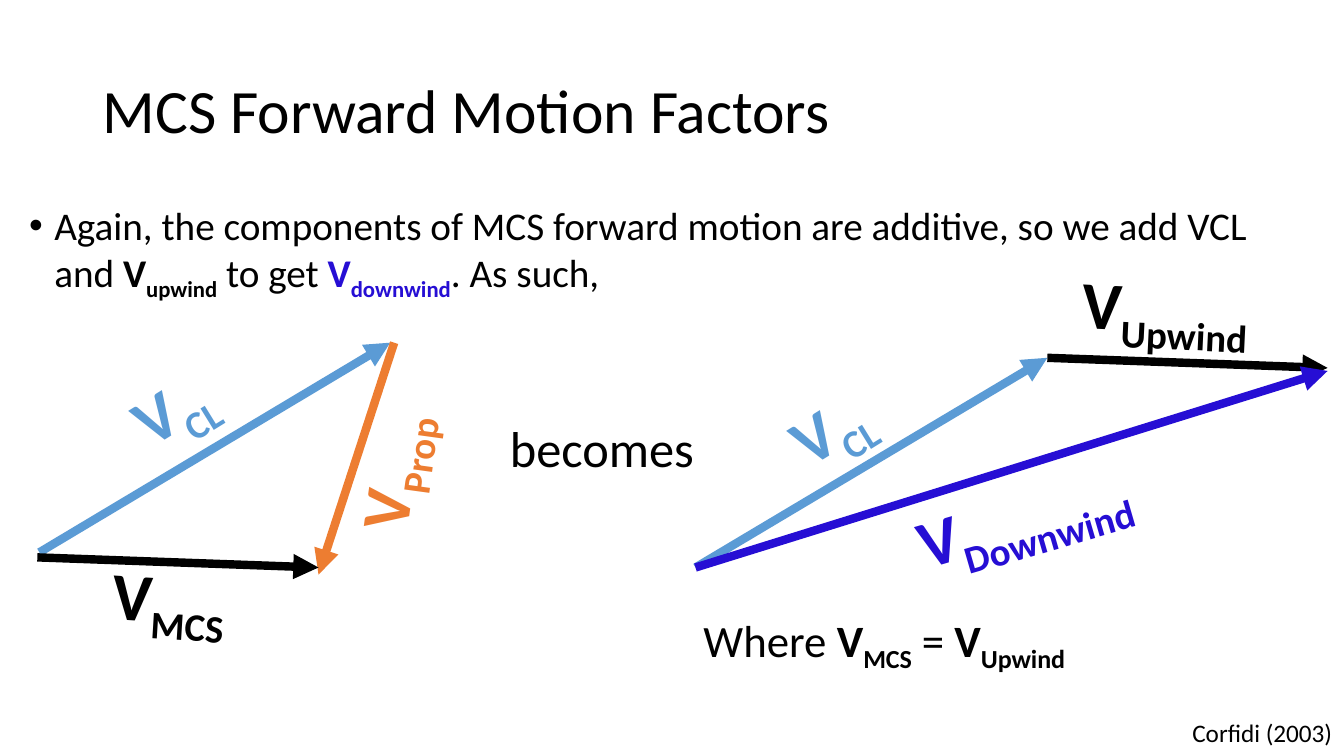
import dataclasses

import lxml.etree
import pptx
import pptx.dml.color
import pptx.enum.shapes
import pptx.enum.text
import pptx.oxml.ns
import pptx.util


@dataclasses.dataclass(frozen=True)
class Theme:
    font: str = "Calibri"
    ink: str = "000000"
    cloud: str = "5B9BD5"
    propagation: str = "ED7D31"
    downwind: str = "260ED4"
    title: int = 44
    body: int = 28
    vector: int = 48
    link: int = 36
    equation: int = 32
    credit: int = 18
    stroke: int = 6


def child(parent, tag, **attributes):
    return lxml.etree.SubElement(parent, pptx.oxml.ns.qn(tag), attributes)


class VectorSlide:
    """Draw text and vectors placed in percent of the slide's width and height."""

    def __init__(self, deck, theme):
        self.deck = deck
        self.theme = theme
        self.page = deck.slides.add_slide(deck.slide_layouts[6])

    def place(self, across, down):
        return (round(self.deck.slide_width * across / 100),
                round(self.deck.slide_height * down / 100))

    def text(self, corner, extent, size, spans, wrap=False, turn=0):
        box = self.page.shapes.add_textbox(*self.place(*corner), *self.place(*extent))
        box.rotation = turn
        frame = box.text_frame
        frame.word_wrap = wrap
        frame.auto_size = (pptx.enum.text.MSO_AUTO_SIZE.NONE if wrap
                           else pptx.enum.text.MSO_AUTO_SIZE.SHAPE_TO_FIT_TEXT)
        para = frame.paragraphs[0]
        for words, color, bold, lowered in spans:
            span = para.add_run()
            span.text = words
            span.font.name = self.theme.font
            span.font.size = pptx.util.Pt(size)
            span.font.bold = bold
            span.font.color.rgb = pptx.dml.color.RGBColor.from_string(color)
            if lowered:
                span.font._element.set("baseline", "-25000")
        return frame

    def plain(self, words):
        return [(words, self.theme.ink, False, False)]

    def symbol(self, subscript, color):
        return [("V", color, True, False), (subscript, color, True, True)]

    def title(self, corner, extent, words):
        frame = self.text(corner, extent, self.theme.title, self.plain(words), wrap=True)
        frame.vertical_anchor = pptx.enum.text.MSO_ANCHOR.MIDDLE
        frame.paragraphs[0].line_spacing = 0.9

    def bullet(self, corner, extent, spans):
        frame = self.text(corner, extent, self.theme.body, spans, wrap=True)
        para = frame.paragraphs[0]
        para.line_spacing = 0.9
        indent = pptx.util.Inches(0.25)
        properties = para._p.get_or_add_pPr()
        properties.set("marL", str(indent))
        properties.set("indent", str(-indent))
        child(properties, "a:buFont", typeface="Arial")
        child(properties, "a:buChar", char="•")

    def label(self, corner, width, subscript, color, turn):
        self.text(corner, (width, 12.13), self.theme.vector,
                  self.symbol(subscript, color), turn=turn)

    def arrow(self, start, end, color):
        line = self.page.shapes.add_connector(
            pptx.enum.shapes.MSO_CONNECTOR.STRAIGHT, *self.place(*start), *self.place(*end))
        line.line.width = pptx.util.Pt(self.theme.stroke)
        line.line.color.rgb = pptx.dml.color.RGBColor.from_string(color)
        child(line.line._get_or_add_ln(), "a:tailEnd", type="triangle")
        child(line._element.spPr, "a:effectLst")


def main():
    deck = pptx.Presentation()
    deck.slide_width = pptx.util.Inches(13.33)
    deck.slide_height = pptx.util.Inches(7.5)
    theme = Theme()
    slide = VectorSlide(deck, theme)

    slide.title((6.9, 5.33), (86.25, 19.33), "MCS Forward Motion Factors")
    slide.bullet((1.43, 26.67), (95.48, 63.47), [
        *slide.plain("Again, the components of MCS forward motion are additive, so we add VCL and "),
        *slide.symbol("upwind", theme.ink),
        *slide.plain(" to get "),
        *slide.symbol("downwind", theme.downwind),
        *slide.plain(". As such,"),
    ])

    origin, cloud_tip = (51.75, 75.07), (77.93, 47.33)
    vectors = [
        ((2.93, 73.07), (29.03, 45.33), theme.cloud, "CL", (9.08, 47.47), 7.65, 328.3),
        ((29.33, 45.33), (23.7, 76), theme.propagation, "Prop", (23.48, 55.47), 11.03, 277.8),
        ((2.78, 73.73), (23.7, 75.07), theme.ink, "MCS", (7.65, 72.93), 10.8, 3.6),
        (origin, cloud_tip, theme.cloud, "CL", (57.98, 50), 7.65, 328.3),
        (cloud_tip, (98.78, 48.67), theme.ink, "Upwind", (79.8, 34.53), 15.45, 2.8),
        (origin, (98.78, 49.07), theme.downwind, "Downwind", (67.28, 61.47), 19.65, 343.8),
    ]
    for start, end, color, subscript, corner, width, turn in vectors:
        slide.arrow(start, end, color)
        slide.label(corner, width, subscript, color, turn)

    slide.text((37.2, 54.53), (15.38, 9.47), theme.link, slide.plain("becomes"))
    slide.text((51.6, 80.4), (30.23, 8.53), theme.equation, [
        *slide.plain("Where "),
        *slide.symbol("MCS", theme.ink),
        *slide.plain(" = "),
        *slide.symbol("Upwind", theme.ink),
    ])
    slide.text((87.98, 94.27), (12.08, 5.33), theme.credit, slide.plain("Corfidi (2003)"))
    deck.save("out.pptx")


if __name__ == "__main__":
    main()
